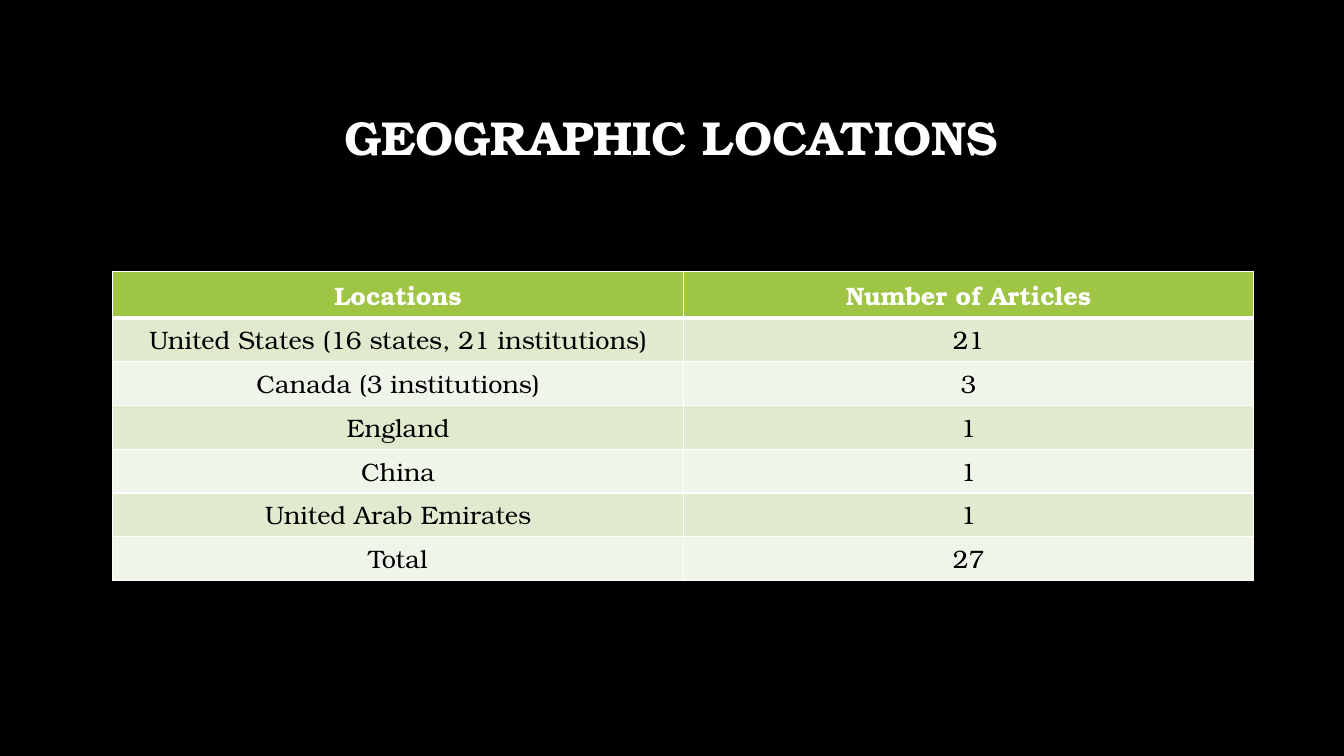
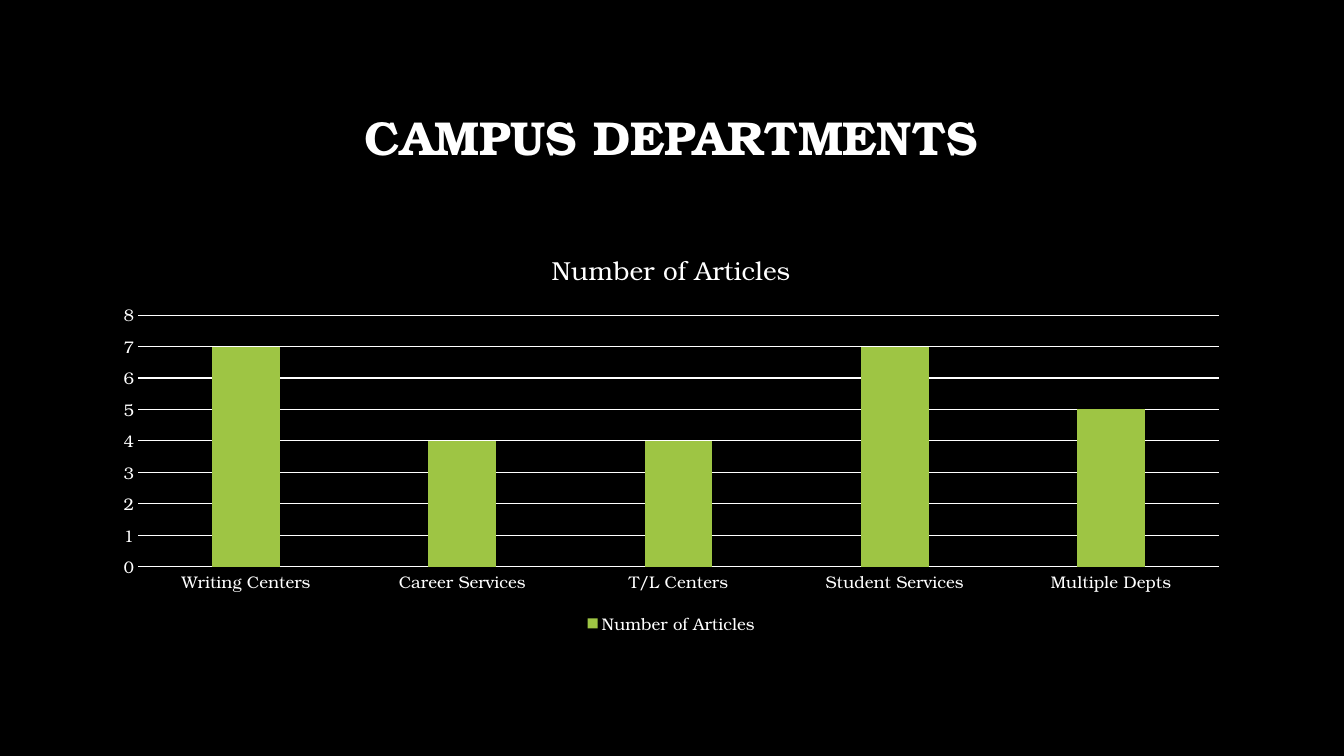
from dataclasses import dataclass

from lxml import etree
from pptx import Presentation
from pptx.chart.data import CategoryChartData
from pptx.dml.color import RGBColor
from pptx.enum.chart import XL_CHART_TYPE, XL_LEGEND_POSITION, XL_TICK_MARK
from pptx.enum.text import MSO_ANCHOR, PP_ALIGN
from pptx.oxml.ns import qn
from pptx.util import Pt

CENTER, MIDDLE = PP_ALIGN.CENTER, MSO_ANCHOR.MIDDLE
COLUMN = XL_CHART_TYPE.COLUMN_CLUSTERED
BOTTOM, NO_TICK = XL_LEGEND_POSITION.BOTTOM, XL_TICK_MARK.NONE
TITLE_ONLY = 5


@dataclass(frozen=True)
class Theme:
    font: str = "TeX Gyre Bonum"
    back: str = "000000"
    light: str = "FFFFFF"
    dark: str = "000000"
    green: str = "9EC544"
    bands: tuple = ("DFEACF", "F0F5E9")
    head: float = 34
    body: float = 18
    label: float = 12
    chart: float = 18.6


THEME = Theme()
WIDE, HIGH = 960, 540
TITLE_BOX = (72, 48, 815, 104.4)
TABLE_BOX = (80.6, 193.7, 815, 208)
CHART_BOX = (72, 165, 815, 291)
ROW, LAST_ROW = 29.5, 31
THIN, THICK, HAIR = 1, 3, 0.75

PLACES = [
    ("Locations", "Number of Articles"),
    ("United States (16 states, 21 institutions)", "21"),
    ("Canada (3 institutions)", "3"),
    ("England", "1"),
    ("China", "1"),
    ("United Arab Emirates", "1"),
    ("Total", "27"),
]
UNITS = {
    "Writing Centers": 7,
    "Career Services": 4,
    "T/L Centers": 4,
    "Student Services": 7,
    "Multiple Depts": 5,
}


# Shared helpers
def points(box):
    return [Pt(n) for n in box]


def assign(item, values):
    for name, value in values.items():
        setattr(item, name, value)


def style(font, size, color=THEME.light, bold=False):
    assign(font, {"name": THEME.font, "size": Pt(size), "bold": bold})
    font.color.rgb = RGBColor.from_string(color)


def paint(fill, color):
    fill.solid()
    fill.fore_color.rgb = RGBColor.from_string(color)


def stroke(line, color=THEME.light):
    line.width = Pt(HAIR)
    paint(line.fill, color)


def write(frame, text, size, color, bold):
    frame.text = text
    para = frame.paragraphs[0]
    para.alignment = CENTER
    style(para.runs[0].font, size, color, bold)
    return para


# Slide with its title
def add_slide(deck, text):
    slide = deck.slides.add_slide(deck.slide_layouts[TITLE_ONLY])
    title = slide.shapes.title
    assign(title, dict(zip(("left", "top", "width", "height"), points(TITLE_BOX))))
    frame = title.text_frame
    assign(frame, {"vertical_anchor": MIDDLE, "word_wrap": True})
    write(frame, text, THEME.head, THEME.light, True).line_spacing = 0.9
    return slide


# Table
def edge(cell, widths):
    props = cell._tc.get_or_add_tcPr()
    for spot, (side, width) in enumerate(widths.items()):
        line = etree.Element(qn(f"a:ln{side}"), w=str(Pt(width)))
        fill = etree.SubElement(line, qn("a:solidFill"))
        etree.SubElement(fill, qn("a:srgbClr"), val=THEME.light)
        props.insert(spot, line)


def add_table(slide, rows):
    shape = slide.shapes.add_table(len(rows), len(rows[0]), *points(TABLE_BOX))
    table = shape.table
    for r, texts in enumerate(rows):
        table.rows[r].height = Pt(LAST_ROW if r == len(rows) - 1 else ROW)
        head = r == 0
        band = THEME.green if head else THEME.bands[(r - 1) % 2]
        ink = THEME.light if head else THEME.dark
        sides = {
            "L": THIN,
            "R": THIN,
            "T": THICK if r == 1 else THIN,
            "B": THICK if head else THIN,
        }
        for c, text in enumerate(texts):
            cell = table.cell(r, c)
            write(cell.text_frame, text, THEME.body, ink, head)
            paint(cell.fill, band)
            edge(cell, sides)


# Column chart
def add_chart(slide, name, counts):
    data = CategoryChartData()
    data.categories = list(counts)
    data.add_series(name, list(counts.values()))
    chart = slide.shapes.add_chart(COLUMN, *points(CHART_BOX), data).chart
    style(chart.font, THEME.label)

    chart.has_title = True
    write(chart.chart_title.text_frame, name, THEME.chart, THEME.light, False)
    chart.chart_title.include_in_layout = False

    chart.has_legend = True
    assign(chart.legend, {"position": BOTTOM, "include_in_layout": False})
    style(chart.legend.font, THEME.label)

    plot = chart.plots[0]
    assign(plot, {"gap_width": 219, "overlap": -27, "vary_by_categories": False})
    paint(plot.series[0].format.fill, THEME.green)

    for axis in (chart.category_axis, chart.value_axis):
        assign(axis, {"major_tick_mark": NO_TICK, "minor_tick_mark": NO_TICK})
        style(axis.tick_labels.font, THEME.label)
    stroke(chart.category_axis.format.line)
    scale = chart.value_axis
    assign(scale, {"minimum_scale": 0, "maximum_scale": 8, "major_unit": 1})
    scale.format.line.fill.background()
    stroke(scale.major_gridlines.format.line)


def main():
    deck = Presentation()
    assign(deck, {"slide_width": Pt(WIDE), "slide_height": Pt(HIGH)})
    paint(deck.slide_master.background.fill, THEME.back)

    add_table(add_slide(deck, "GEOGRAPHIC LOCATIONS"), PLACES)
    add_chart(add_slide(deck, "CAMPUS DEPARTMENTS"), "Number of Articles", UNITS)
    deck.save("out.pptx")


if __name__ == "__main__":
    main()
